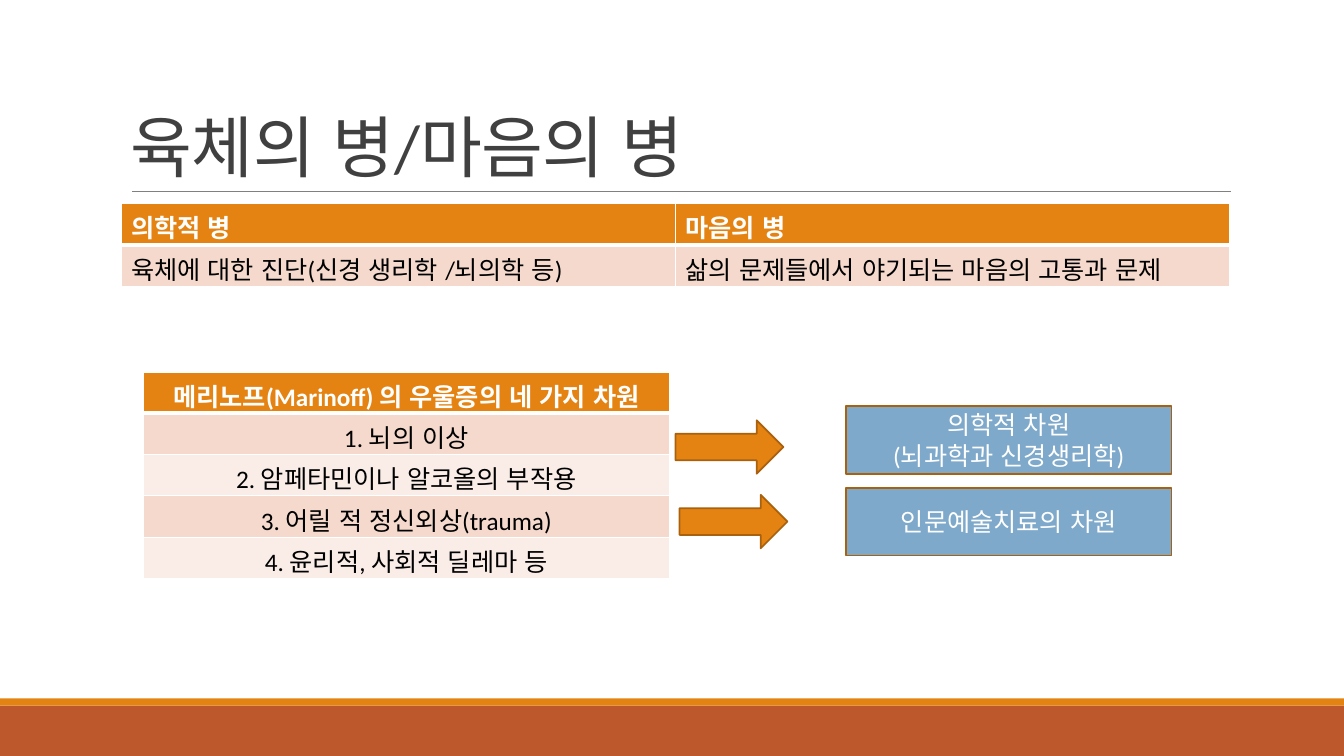
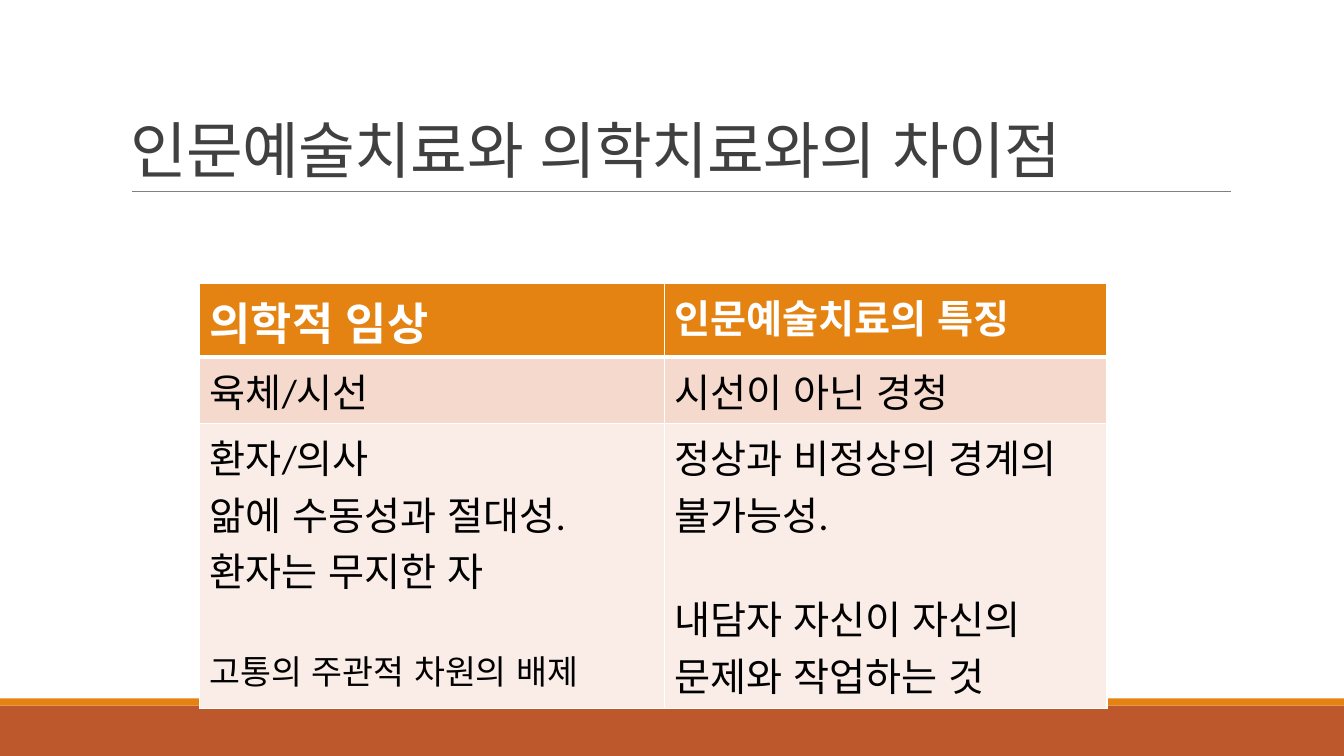
from lxml import etree
from pptx import Presentation
from pptx import util as u
from pptx.dml.color import RGBColor
from pptx.enum import lang, shapes, text
from pptx.oxml import ns

WHITE = RGBColor(0xFF, 0xFF, 0xFF)
BLACK = RGBColor(0, 0, 0)
TITLE_GRAY = RGBColor(0x40, 0x40, 0x40)
RULE_GRAY = RGBColor(0x80, 0x80, 0x80)
ORANGE = RGBColor(0xE4, 0x83, 0x12)
OUTLINE = RGBColor(0xA9, 0x61, 0x0D)
RUST = RGBColor(0xBD, 0x58, 0x2C)
BLUE = RGBColor(0x7E, 0xA9, 0xCA)
BANDS = (RGBColor(0xF5, 0xD9, 0xCC), RGBColor(0xFA, 0xED, 0xE7))
FONT = "Calibri"


def add_text(frame, content, size=18, color=BLACK, bold=False, align=None,
             before=0, line_spacing=None, tracking=None):
    for index, line in enumerate(content.split("\n")):
        paragraph = frame.paragraphs[-1]
        if paragraph.runs:
            paragraph = frame.add_paragraph()
        paragraph.alignment = align
        paragraph.space_before = u.Pt(0 if index else before)
        if line_spacing:
            paragraph.line_spacing = line_spacing
        run = paragraph.add_run()
        run.text = line
        run.font.name = FONT
        run.font.size = u.Pt(size)
        run.font.bold = bold
        run.font.color.rgb = color
        run.font.language_id = lang.MSO_LANGUAGE_ID.KOREAN
        if tracking:
            run._r.get_or_add_rPr().set("spc", str(int(tracking * 100)))


def add_borders(cell, **widths):
    properties = cell._tc.get_or_add_tcPr()
    for side in ("L", "R", "T", "B"):
        width = u.Pt(widths.get(side, 1))
        border = etree.SubElement(properties, ns.qn(f"a:ln{side}"), w=str(width))
        fill = etree.SubElement(border, ns.qn("a:solidFill"))
        etree.SubElement(fill, ns.qn("a:srgbClr"), val=str(WHITE))


class Deck:
    def __init__(self):
        self.presentation = Presentation()
        self.presentation.slide_width = u.Inches(13.33)
        self.presentation.slide_height = u.Inches(7.5)
        self.slide = None

    def add_slide(self, title, size):
        layout = self.presentation.slide_layouts[6]
        self.slide = self.presentation.slides.add_slide(layout)
        self.add_shape("RECTANGLE", 0, 7, 13.33, 0.5, RUST)
        self.add_shape("RECTANGLE", 0, 6.93, 13.33, 0.07, ORANGE)
        self.add_rule(1.31, 12.21, 1.9)
        box = self.slide.shapes.add_textbox(
            u.Inches(1.2), u.Inches(0.31), u.Inches(11), u.Inches(1.59))
        frame = box.text_frame
        frame.word_wrap = True
        frame.vertical_anchor = text.MSO_ANCHOR.BOTTOM
        add_text(frame, title, size=size, color=TITLE_GRAY, line_spacing=0.85, tracking=-0.5)

    def add_rule(self, left, right, top):
        rule = self.slide.shapes.add_connector(
            shapes.MSO_CONNECTOR.STRAIGHT,
            u.Inches(left), u.Inches(top), u.Inches(right), u.Inches(top))
        rule.line.color.rgb = RULE_GRAY
        rule.line.width = u.Pt(0.5)
        etree.SubElement(rule._element.spPr, ns.qn("a:effectLst"))

    def add_shape(self, kind, left, top, width, height, fill, outline=None, label=None):
        shape = self.slide.shapes.add_shape(
            shapes.MSO_SHAPE[kind],
            u.Inches(left), u.Inches(top), u.Inches(width), u.Inches(height))
        shape.shadow.inherit = False
        shape.fill.solid()
        shape.fill.fore_color.rgb = fill
        if outline:
            shape.line.color.rgb = outline
            shape.line.width = u.Pt(1.25)
        else:
            shape.line.fill.background()
        if label:
            shape.text_frame.vertical_anchor = text.MSO_ANCHOR.MIDDLE
            add_text(shape.text_frame, label, color=WHITE, align=text.PP_ALIGN.CENTER)

    def add_table(self, left, top, columns, heights, rows, bottom_margin=0.05, **style):
        frame = self.slide.shapes.add_table(
            len(rows), len(columns), u.Inches(left), u.Inches(top),
            u.Inches(sum(columns)), u.Inches(sum(heights)))
        table = frame.table
        for column, width in zip(table.columns, columns):
            column.width = u.Inches(width)
        for index, (height, row) in enumerate(zip(heights, rows)):
            table.rows[index].height = u.Inches(height)
            header = index == 0
            for cell, content in zip(table.rows[index].cells, row):
                cell.margin_bottom = u.Inches(bottom_margin)
                add_borders(cell, B=3 if header else 1, T=3 if index == 1 else 1)
                cell.fill.solid()
                cell.fill.fore_color.rgb = ORANGE if header else BANDS[(index - 1) % 2]
                base = {"color": WHITE if header else BLACK, "bold": header, **style}
                for part in [content] if isinstance(content, str) else content:
                    words, changes = (part, {}) if isinstance(part, str) else part
                    add_text(cell.text_frame, words, **{**base, **changes})


def add_illness_slide(deck):
    deck.add_slide("육체의 병/마음의 병", 48)
    deck.add_table(1.2, 2.02, [5.5, 5.5], [0.41] * 2, [
        ["의학적 병", "마음의 병"],
        ["육체에 대한 진단(신경 생리학 /뇌의학 등)",
         "삶의 문제들에서 야기되는 마음의 고통과 문제"],
    ])
    dimensions = [
        "메리노프(Marinoff) 의 우울증의 네 가지 차원",
        "1. 뇌의 이상",
        "2. 암페타민이나 알코올의 부작용",
        "3. 어릴 적 정신외상(trauma)",
        "4. 윤리적, 사회적 딜레마 등",
    ]
    deck.add_table(1.42, 3.69, [5.22], [0.41] * 5, [[line] for line in dimensions],
                   bottom_margin=0, align=text.PP_ALIGN.CENTER)
    for left, top in ((6.7, 4.17), (6.74, 4.91)):
        deck.add_shape("RIGHT_ARROW", left, top, 1.07, 0.53, ORANGE, OUTLINE)
    labels = ("의학적 차원\n(뇌과학과 신경생리학)", "인문예술치료의 차원")
    for index, label in enumerate(labels):
        deck.add_shape("FLOWCHART_PROCESS", 8.39, 4.03 + index * 0.81, 3.23, 0.67,
                       BLUE, OUTLINE, label)


def add_difference_slide(deck):
    deck.add_slide("인문예술치료와 의학치료와의 차이점", 44)
    deck.add_table(1.98, 2.81, [4.61, 4.39], [0.73, 0.66, 2.83], [
        [[("의학적 임상", {"size": 32})], "인문예술치료의 특징"],
        ["육체/시선", "시선이 아닌 경청"],
        [["환자/의사\n앎에 수동성과 절대성.\n환자는 무지한 자",
          ("고통의 주관적 차원의 배제", {"size": 24, "before": 34})],
         ["정상과 비정상의 경계의 불가능성.",
          ("내담자 자신이 자신의 문제와 작업하는 것", {"before": 34})]],
    ], size=28)


def main():
    deck = Deck()
    add_illness_slide(deck)
    add_difference_slide(deck)
    deck.presentation.save("out.pptx")


if __name__ == "__main__":
    main()
